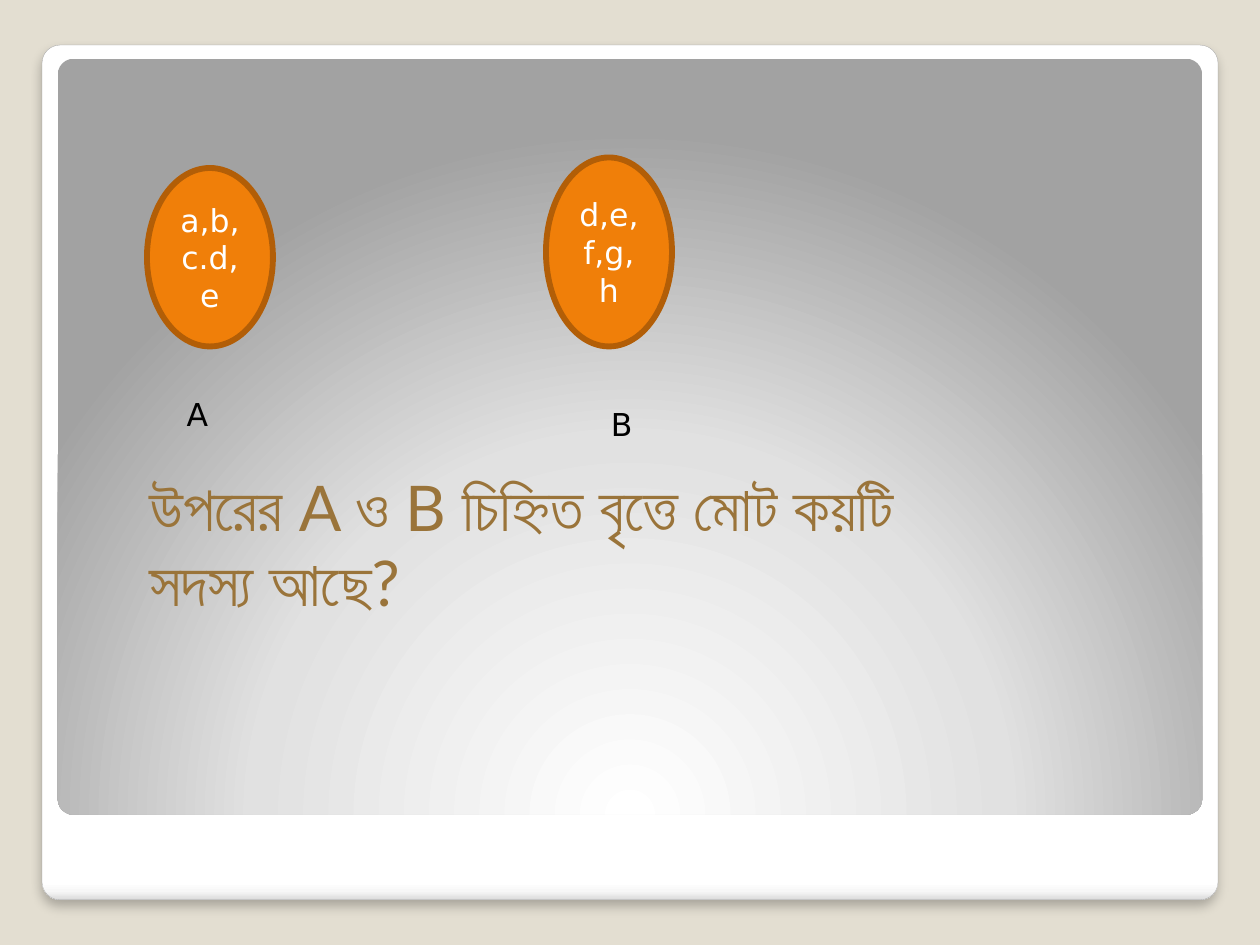
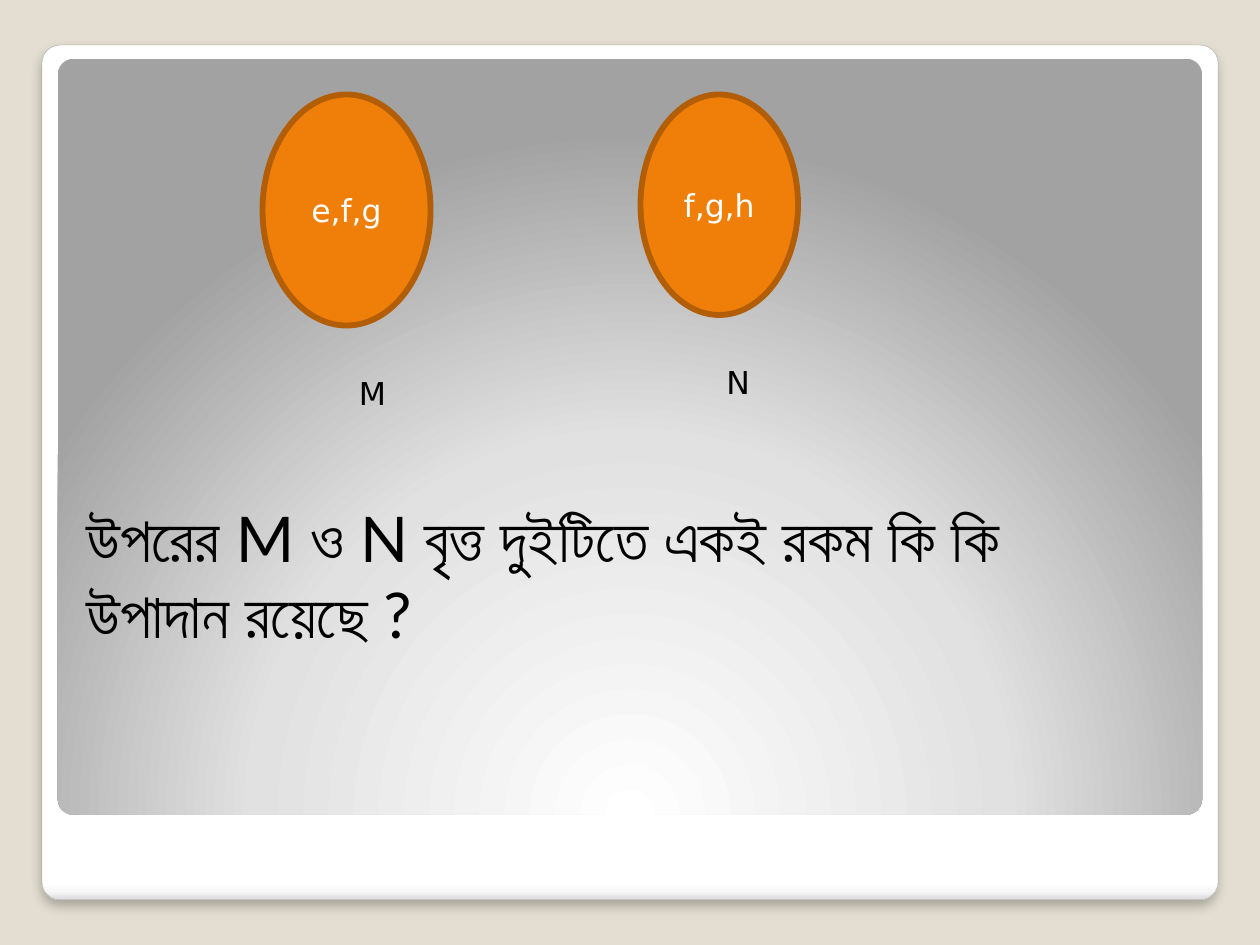
from lxml import etree
from pptx import Presentation
from pptx.dml.color import RGBColor
from pptx.enum.shapes import MSO_SHAPE as SHAPE
from pptx.enum.text import MSO_ANCHOR as ANCHOR, MSO_AUTO_SIZE as AUTO_SIZE, PP_ALIGN as ALIGN
from pptx.oxml.ns import qn
from pptx.util import Pt

PX = 7620  # EMU per px, 120 px to the inch
SLIDE_SIZE = (1200, 900)
TITLE_ONLY = 5

BACKDROP, FRAME_LINE = "E3DED1", "A4A4A4"
ORANGE, DARK_ORANGE, BROWN = "F07F09", "B25E07", "9A743A"
BLACK, WHITE = "000000", "FFFFFF"
SET_FONT, QUESTION_FONT = "DejaVu Sans", "Lato"


def rgb(hex_color):
    return RGBColor.from_string(hex_color)


def emu(*lengths):
    return [length * PX for length in lengths]


def xml_child(parent, tag, **attributes):
    child = etree.SubElement(parent, qn(tag))
    for key, value in attributes.items():
        child.set(key, str(value))
    return child


def add_run(paragraph, text, font, size, color):
    run = paragraph.add_run()
    run.text = text
    run.font.name = font
    run.font.size = Pt(size)
    run.font.color.rgb = rgb(color)


def set_gradient(shape, stops):
    """Fill the shape with (percent, colour) stops; return the gradient element."""
    shape.fill.background()
    props = shape.element.spPr
    gradient = etree.Element(qn("a:gradFill"), rotWithShape="1")
    stop_list = xml_child(gradient, "a:gsLst")
    for percent, color in stops:
        stop = xml_child(stop_list, "a:gs", pos=percent * 1000)
        xml_child(stop, "a:srgbClr", val=color)
    props.replace(props.find(qn("a:noFill")), gradient)
    return gradient


def add_panel(slide, box):
    panel = slide.shapes.add_shape(SHAPE.ROUNDED_RECTANGLE, *emu(*box))
    panel.adjustments[0] = 0.021
    panel.shadow.inherit = False
    return panel


def build_layout(layout, slide):
    """Give the layout its backdrop, framed card and shaded panel."""
    layout.background.fill.solid()
    layout.background.fill.fore_color.rgb = rgb(BACKDROP)

    # White card with a soft shadow
    card = add_panel(slide, (40, 43, 1120, 814))
    gradient = set_gradient(card, [(0, WHITE), (98, WHITE), (99, "F7F7F7"), (100, "DADADA")])
    xml_child(gradient, "a:lin", ang=5400000, scaled=0)
    card.line.color.rgb = rgb(FRAME_LINE)
    card.line.width = Pt(0.16)
    shadow = xml_child(card.element.spPr.find(qn("a:effectLst")), "a:outerShdw",
                       blurRad=Pt(6), dist=Pt(4), dir=5400000, algn="t", rotWithShape=0)
    xml_child(xml_child(shadow, "a:srgbClr", val=BLACK), "a:alpha", val=25000)

    # Panel shaded outwards from its lower edge
    panel = add_panel(slide, (55, 56, 1090, 720))
    gradient = set_gradient(panel, [(0, WHITE), (55, "E1E1E1"), (100, "A2A2A2")])
    focus = xml_child(gradient, "a:path", path="circle")
    xml_child(focus, "a:fillToRect", l=50000, t=175000, r=50000, b=-75000)
    panel.line.fill.background()

    # Move both behind the layout's placeholders
    for position, part in enumerate((card, panel), start=2):
        layout.shapes.element.insert(position, part.element)


def add_set(slide, box, members, letter, indent, gap=40):
    """Draw a set as an ellipse, with its letter below it."""
    left, top, _, height = box
    circle = slide.shapes.add_shape(SHAPE.OVAL, *emu(*box))
    circle.shadow.inherit = False
    circle.fill.solid()
    circle.fill.fore_color.rgb = rgb(ORANGE)
    circle.line.color.rgb = rgb(DARK_ORANGE)
    circle.line.width = Pt(3.35)
    frame = circle.text_frame
    frame.word_wrap = True
    frame.vertical_anchor = ANCHOR.MIDDLE
    frame.paragraphs[0].alignment = ALIGN.CENTER
    add_run(frame.paragraphs[0], members, SET_FONT, 18, WHITE)

    letter_box = (left + indent, top + height + gap, 64, 48)
    label = slide.shapes.add_textbox(*emu(*letter_box)).text_frame
    label.word_wrap = True
    add_run(label.paragraphs[0], letter, SET_FONT, 18, BLACK)


def add_question(slide, box, lines, color):
    question = slide.shapes.title
    question.left, question.top, question.width, question.height = emu(*box)
    frame = question.text_frame
    frame.word_wrap = True
    frame.auto_size = AUTO_SIZE.NONE
    frame.vertical_anchor = ANCHOR.TOP
    for index, line in enumerate(lines):
        paragraph = frame.add_paragraph() if index else frame.paragraphs[0]
        paragraph.alignment = ALIGN.LEFT
        add_run(paragraph, line, QUESTION_FONT, 36, color)


def main():
    deck = Presentation()
    deck.slide_width, deck.slide_height = emu(*SLIDE_SIZE)
    layout = deck.slide_layouts[TITLE_ONLY]

    # How many members in all
    union = deck.slides.add_slide(layout)
    build_layout(layout, union)
    add_set(union, (140, 160, 120, 170), "a,b,c.d,e", "A", indent=26)
    add_set(union, (520, 150, 120, 180), "d,e,f,g,h", "B", indent=50, gap=50)
    add_question(union, (130, 440, 750, 195),
                 ["উপরের A ও B চিহ্নিত বৃত্তে মোট কয়টি সদস্য আছে?"], BROWN)

    # Which members are shared
    common = deck.slides.add_slide(layout)
    add_set(common, (250, 90, 160, 220), "e,f,g", "M", indent=80)
    add_set(common, (610, 90, 150, 210), "f,g,h", "N", indent=70)
    add_question(common, (70, 470, 942, 157),
                 ["উপরের M ও N বৃত্ত দুইটিতে একই রকম কি কি", "উপাদান রয়েছে ?"], BLACK)

    deck.save("out.pptx")


if __name__ == "__main__":
    main()
